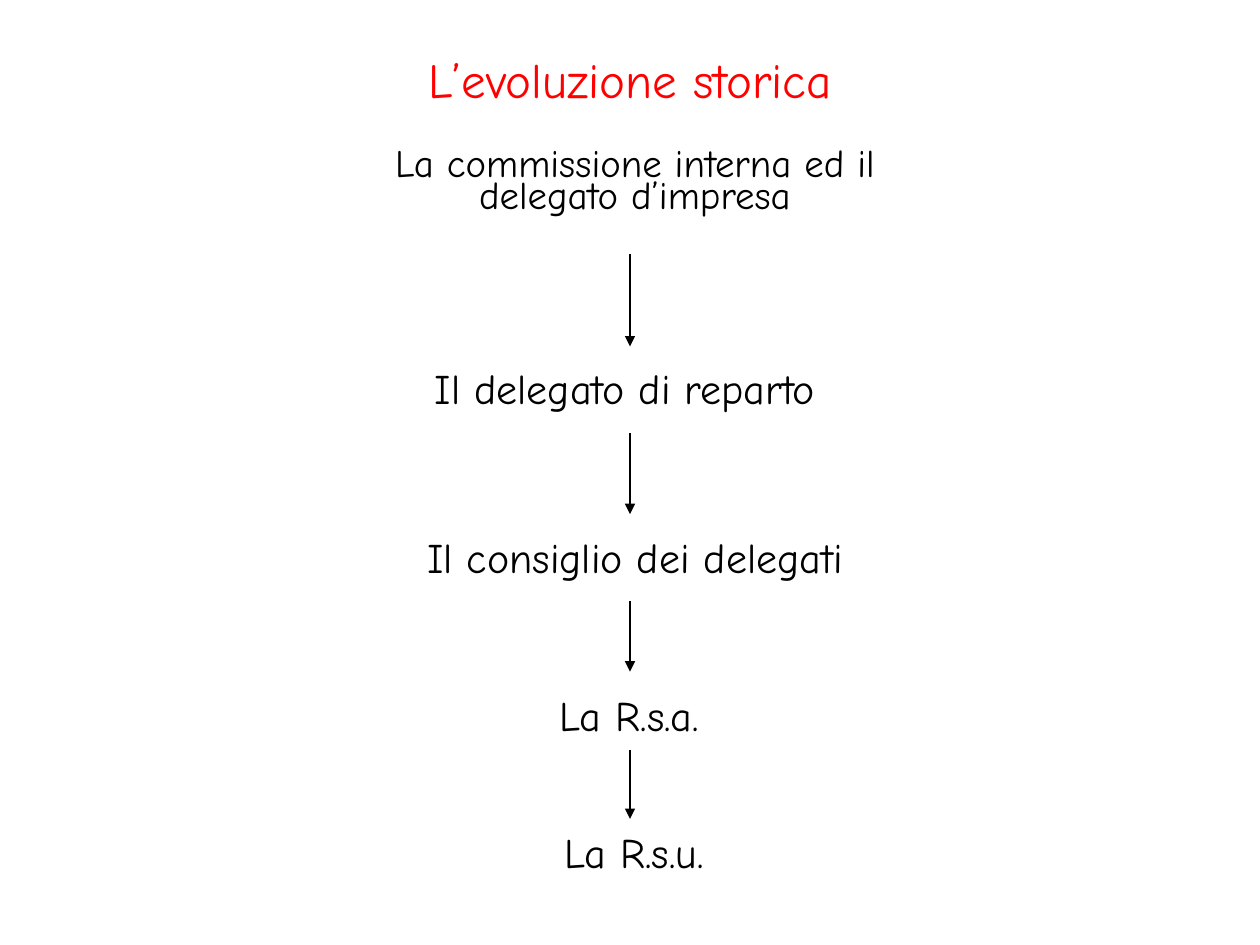
"""Build a slide on the historical evolution of workers' representation."""
from lxml import etree
from pptx import Presentation
from pptx.dml.color import RGBColor
from pptx.enum.shapes import MSO_CONNECTOR
from pptx.enum.text import MSO_ANCHOR, PP_ALIGN
from pptx.oxml.ns import qn
from pptx.util import Inches, Pt

CENTER, LEFT = PP_ALIGN.CENTER, PP_ALIGN.LEFT
TOP, MIDDLE = MSO_ANCHOR.TOP, MSO_ANCHOR.MIDDLE
STRAIGHT = MSO_CONNECTOR.STRAIGHT

THEME = {
    "font": "Comic Neue",
    "title_color": RGBColor(0xFF, 0, 0),
    "ink": RGBColor(0, 0, 0),
    "title_size": 28,
    "first_size": 22.2,
    "stage_size": 24,
    "line_width": 0.75,
}
WIDTH, HEIGHT = Inches(10), Inches(7.5)

TITLE = ("L’evoluzione storica", (7.5, 0, 85, 16.67))
STAGES = [
    ("La commissione interna ed il delegato d’impresa", (30.3, 15.33, 40.2, 8.93),
     {"size": THEME["first_size"], "line_spacing": 0.7}),
    ("Il delegato di reparto", (30.3, 37.73, 38.6, 6.67), {}),
    ("Il consiglio dei delegati", (30.8, 55.6, 39.2, 6.67), {}),
    ("La R.s.a.", (35.8, 72.27, 28.3, 6.67), {}),
    ("La R.s.u.", (43.8, 86.8, 14.5, 6.67), {"align": LEFT, "wrap": False}),
]
ARROW_COLUMN = 50
ARROW_ROWS = [(26.93, 36.67), (45.87, 54.4), (63.6, 71.07), (79.33, 86.67)]


def across(share):
    return round(WIDTH * share / 100)


def down(share):
    return round(HEIGHT * share / 100)


def add_text(page, text, area, *, size=THEME["stage_size"], color=THEME["ink"],
             align=CENTER, anchor=TOP, line_spacing=None, wrap=True):
    left, top, width, height = area
    box = page.shapes.add_textbox(across(left), down(top), across(width), down(height))
    frame = box.text_frame
    frame.word_wrap = wrap
    frame.vertical_anchor = anchor
    para = frame.paragraphs[0]
    para.alignment = align
    if line_spacing:
        para.line_spacing = line_spacing
    span = para.add_run()
    span.text = text
    span.font.name = THEME["font"]
    span.font.size = Pt(size)
    span.font.color.rgb = color


def add_arrow(page, start, end):
    middle = across(ARROW_COLUMN)
    arrow = page.shapes.add_connector(STRAIGHT, middle, down(start), middle, down(end))
    arrow.line.color.rgb = THEME["ink"]
    arrow.line.width = Pt(THEME["line_width"])
    etree.SubElement(arrow.line._get_or_add_ln(), qn("a:tailEnd"), type="triangle")
    etree.SubElement(arrow._element.spPr, qn("a:effectLst"))


def main():
    deck = Presentation()
    deck.slide_width, deck.slide_height = WIDTH, HEIGHT
    page = deck.slides.add_slide(deck.slide_layouts[6])
    for text, area, style in STAGES:
        add_text(page, text, area, **style)
    for start, end in ARROW_ROWS:
        add_arrow(page, start, end)
    text, area = TITLE
    add_text(page, text, area, size=THEME["title_size"],
             color=THEME["title_color"], anchor=MIDDLE)
    deck.save("out.pptx")


if __name__ == "__main__":
    main()
